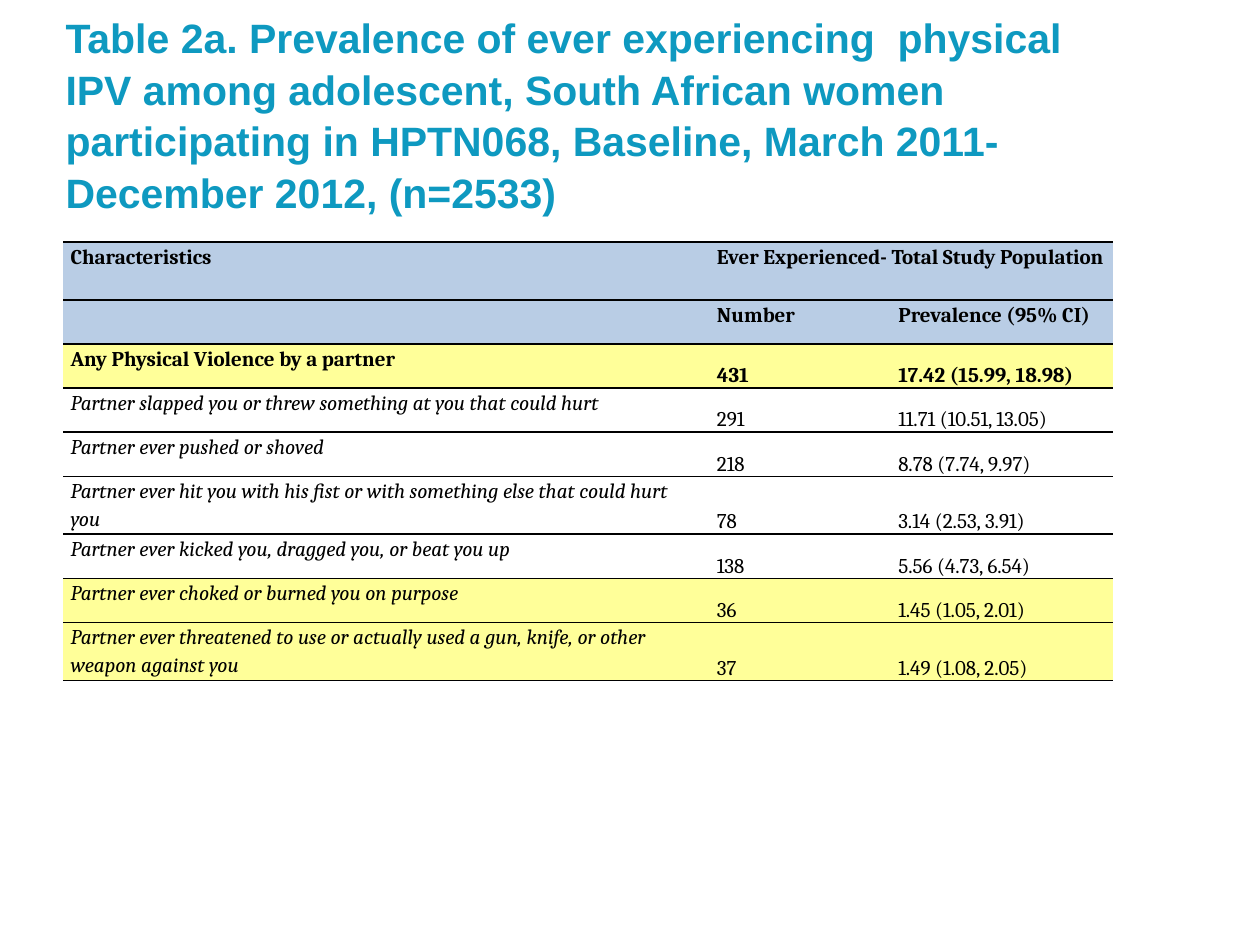
"""Build the slide on the prevalence of physical partner violence."""
import pptx
import pptx.util
import pptx.dml.color
import pptx.enum.text
import pptx.oxml.ns
from lxml import etree

Inches, Pt = pptx.util.Inches, pptx.util.Pt
Anchor = pptx.enum.text.MSO_ANCHOR

HEX = {"title": "0E99C0", "text": "000000", "line": "000000",
       "head": "B9CDE5", "mark": "FFFF99"}
TITLE = ("Table 2a. Prevalence of ever experiencing  physical IPV among "
         "adolescent, South African women participating in HPTN068, "
         "Baseline, March 2011-December 2012, (n=2533)")
ROWS = [
    ("head", "Characteristics", "Ever Experienced- Total Study Population", ""),
    ("head", "", "Number", "Prevalence (95% CI)"),
    ("mark", "Any Physical Violence by a partner", "431", "17.42 (15.99, 18.98)"),
    (None, "Partner slapped you or threw something at you that could hurt",
     "291", "11.71 (10.51, 13.05)"),
    (None, "Partner ever pushed or shoved", "218", "8.78 (7.74, 9.97)"),
    (None, "Partner ever hit you with his fist or with something else that "
     "could hurt you", "78", "3.14 (2.53, 3.91)"),
    (None, "Partner ever kicked you, dragged you, or beat you up",
     "138", "5.56 (4.73, 6.54)"),
    ("mark", "Partner ever choked or burned you on purpose",
     "36", "1.45 (1.05, 2.01)"),
    ("mark", "Partner ever threatened to use or actually used a gun, knife, "
     "or other weapon against you", "37", "1.49 (1.08, 2.05)"),
]
COLS = (5.13, 1.44, 1.76)
TALL, LOW = 0.46, 0.35
TALL_ROWS = {0, 5, 8}
BOLD_ROWS = 3
HEAD_ROWS = 2


def color(name):
    return pptx.dml.color.RGBColor.from_string(HEX[name])


def write(frame, text, font="Cambria", size=12, tint="text", bold=False,
          italic=False, space=1.15):
    para = frame.paragraphs[0]
    para.line_spacing = space
    if text:
        run = para.add_run()
        run.text = text
        run.font.name, run.font.size = font, Pt(size)
        run.font.bold, run.font.italic = bold, italic
        run.font.color.rgb = color(tint)


def rule(cell):
    props = cell._tc.get_or_add_tcPr()
    qn = pptx.oxml.ns.qn
    for spot, side in enumerate("LRTB"):
        line = etree.Element(qn("a:ln" + side), w=str(Pt(1)))
        if side in "TB":
            fill = etree.SubElement(line, qn("a:solidFill"))
            etree.SubElement(fill, qn("a:srgbClr"), val=HEX["line"])
        else:
            etree.SubElement(line, qn("a:noFill"))
        props.insert(spot, line)


def add_title(slide):
    title = slide.shapes.title
    title.left, title.top = Inches(0.42), Inches(0.5)
    title.width, title.height = Inches(8.67), Inches(1.25)
    frame = title.text_frame
    frame.word_wrap = True
    frame.auto_size = pptx.enum.text.MSO_AUTO_SIZE.NONE
    frame.vertical_anchor = Anchor.BOTTOM
    frame.margin_bottom = Inches(0.03)
    write(frame, TITLE, font="Arial", size=23.4, tint="title", bold=True,
          space=1.05)
    frame.paragraphs[0].alignment = pptx.enum.text.PP_ALIGN.LEFT


def add_grid(slide):
    highs = [TALL if row in TALL_ROWS else LOW for row in range(len(ROWS))]
    grid = slide.shapes.add_table(
        len(ROWS), len(COLS), Inches(0.5), Inches(1.92),
        Inches(sum(COLS)), Inches(sum(highs))).table
    grid.first_row = grid.horz_banding = False
    for col, wide in zip(grid.columns, COLS):
        col.width = Inches(wide)
    for row, high in zip(grid.rows, highs):
        row.height = Inches(high)
    grid.cell(0, 1).merge(grid.cell(0, 2))
    for row, (shade, *texts) in enumerate(ROWS):
        for col, text in enumerate(texts):
            cell = grid.cell(row, col)
            cell.margin_left = cell.margin_right = Inches(0.06)
            cell.margin_top = cell.margin_bottom = 0
            low = row >= HEAD_ROWS and col > 0
            cell.vertical_anchor = Anchor.BOTTOM if low else Anchor.TOP
            if shade:
                cell.fill.solid()
                cell.fill.fore_color.rgb = color(shade)
            else:
                cell.fill.background()
            rule(cell)
            bold = row < BOLD_ROWS
            write(cell.text_frame, text, bold=bold,
                  italic=not bold and col == 0)


def main():
    deck = pptx.Presentation()
    deck.slide_width, deck.slide_height = Inches(10), Inches(7.5)
    slide = deck.slides.add_slide(deck.slide_layouts[5])
    add_title(slide)
    add_grid(slide)
    deck.save("out.pptx")


if __name__ == "__main__":
    main()
